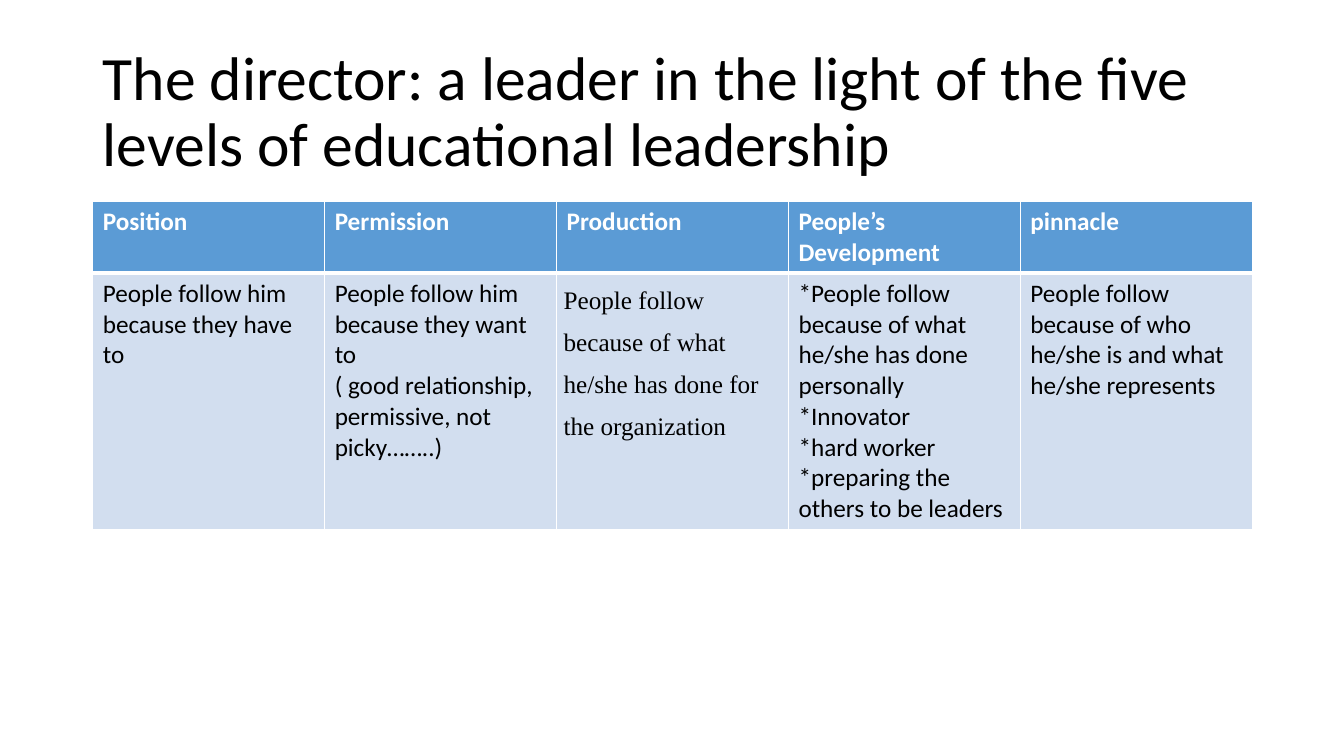
from lxml.etree import SubElement
from pptx import Presentation
from pptx.dml.color import RGBColor
from pptx.enum.text import MSO_ANCHOR, MSO_AUTO_SIZE, PP_ALIGN
from pptx.oxml.ns import qn
from pptx.util import Inches, Pt

LEVELS = [
    ("Position", "People follow him because they have to"),
    ("Permission", "People follow him because they want to\n"
                   "( good relationship, permissive, not picky……..)"),
    ("Production", "People follow because of what he/she has done for the organization"),
    ("People’s Development", "*People follow because of what he/she has done personally\n"
                             "*Innovator\n"
                             "*hard worker *preparing the others to be leaders"),
    ("pinnacle", "People follow because of who he/she is and what he/she represents"),
]


def rgb(value):
    """Turn a hex string into a colour."""
    return RGBColor.from_string(value)


def format_text(tf, size, color, bold=False, font="Calibri", spacing=None):
    """Format every paragraph and run of a text frame."""
    for p in tf.paragraphs:
        p.alignment = PP_ALIGN.LEFT
        p.line_spacing = spacing
        for r in p.runs:
            r.font.name = font
            r.font.size = Pt(size)
            r.font.bold = bold
            r.font.color.rgb = rgb(color)


def set_borders(cell, color, widths):
    """Draw the left, right, top and bottom borders of a cell."""
    tcPr = cell._tc.get_or_add_tcPr()
    for i, (side, width) in enumerate(zip("LRTB", widths)):
        ln = SubElement(tcPr, qn(f"a:ln{side}"), w=str(Pt(width)))
        SubElement(SubElement(ln, qn("a:solidFill")), qn("a:srgbClr"), val=color)
        tcPr.insert(i, ln)


def add_title(s, text, x, y, w, h):
    """Place the slide title in the given box."""
    title = s.shapes.title
    title.left, title.top, title.width, title.height = map(Inches, (x, y, w, h))
    tf = title.text_frame
    tf.text = text
    tf.word_wrap = True
    tf.auto_size = MSO_AUTO_SIZE.NONE
    tf.vertical_anchor = MSO_ANCHOR.MIDDLE
    format_text(tf, 44, "000000", spacing=0.9)


def fill_cell(cell, text, fill, color, bold, widths):
    """Write and style one table cell."""
    cell.text_frame.text = text
    cell.fill.solid()
    cell.fill.fore_color.rgb = rgb(fill)
    format_text(cell.text_frame, 18, color, bold)
    set_borders(cell, "FFFFFF", widths)


def add_levels_table(s, x, y, w, heights):
    """Place the table of leadership levels, one column per level."""
    frame = s.shapes.add_table(2, len(LEVELS), Inches(x), Inches(y),
                               Inches(w), Inches(sum(heights)))
    table = frame.table
    for row, height in zip(table.rows, heights):
        row.height = Inches(height)
    for i, (level, reason) in enumerate(LEVELS):
        table.columns[i].width = Inches(w / len(LEVELS))
        fill_cell(table.cell(0, i), level, "5B9BD5", "FFFFFF", True, (1, 1, 1, 3))
        fill_cell(table.cell(1, i), reason, "D2DEEF", "000000", False, (1, 1, 3, 1))
    production = table.cell(1, 2)
    production.margin_left = production.margin_right = Inches(0.07)
    production.margin_top = production.margin_bottom = 0
    format_text(production.text_frame, 18, "000000", font="Times New Roman", spacing=1.5)


def main():
    """Build and save the slide."""
    prs = Presentation()
    prs.slide_width, prs.slide_height = Inches(13.33), Inches(7.5)
    s = prs.slides.add_slide(prs.slide_layouts[5])
    add_title(s, "The director: a leader in the light of the five levels "
                 "of educational leadership", 0.92, 0.4, 11.5, 1.45)
    add_levels_table(s, 0.92, 2, 11.5, (0.7, 2.5))
    prs.save("out.pptx")


if __name__ == "__main__":
    main()
